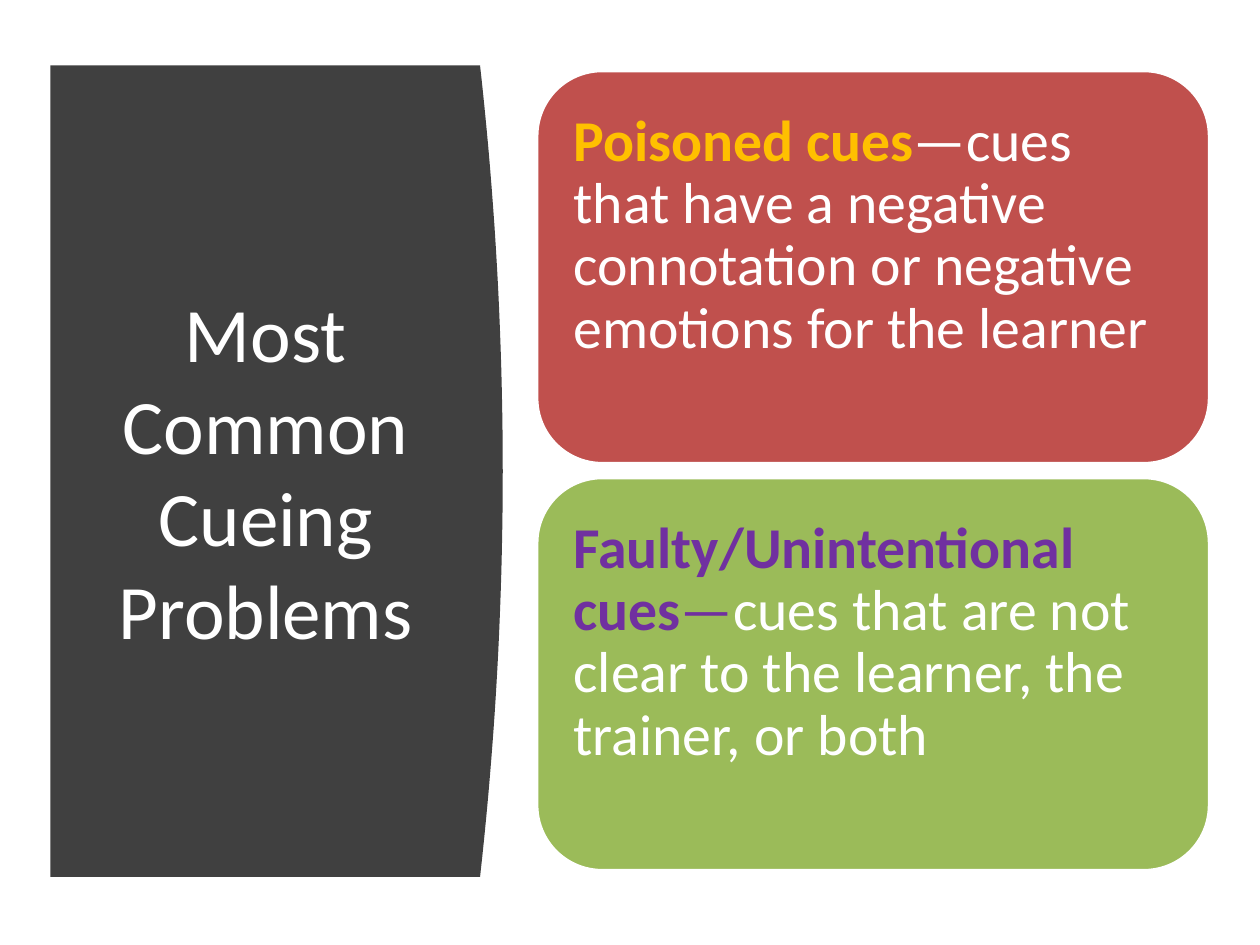
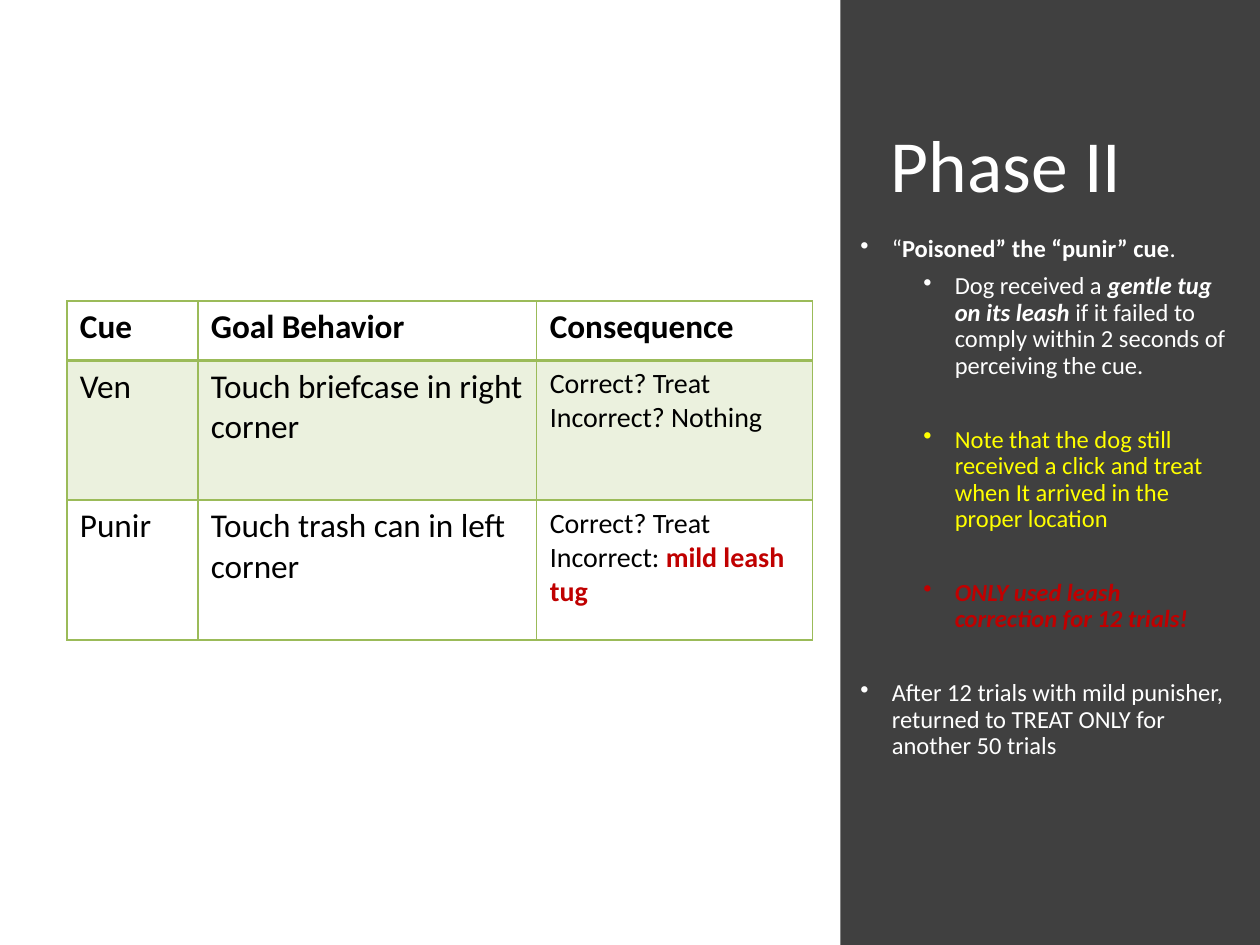
from dataclasses import dataclass

from lxml import etree
from pptx import Presentation
from pptx.dml.color import RGBColor
from pptx.enum.shapes import MSO_SHAPE
from pptx.enum.text import MSO_ANCHOR, PP_ALIGN
from pptx.oxml.ns import qn
from pptx.util import Inches, Pt

ROUND_RECT, RECT = MSO_SHAPE.ROUNDED_RECTANGLE, MSO_SHAPE.RECTANGLE
TOP, MIDDLE, BOTTOM = MSO_ANCHOR.TOP, MSO_ANCHOR.MIDDLE, MSO_ANCHOR.BOTTOM
LEFT, CENTER = PP_ALIGN.LEFT, PP_ALIGN.CENTER

WHITE = RGBColor(0xFF, 0xFF, 0xFF)
BLACK = RGBColor(0, 0, 0)
CHARCOAL = RGBColor(0x40, 0x40, 0x40)
RED = RGBColor(0xC0, 0x50, 0x4D)
GREEN = RGBColor(0x9B, 0xBB, 0x59)
PALE_GREEN = RGBColor(0xEB, 0xF1, 0xDE)
GOLD = RGBColor(0xFF, 0xC0, 0x00)
PURPLE = RGBColor(0x70, 0x30, 0xA0)
YELLOW = RGBColor(0xFF, 0xFF, 0x00)
DEEP_RED = RGBColor(0xC0, 0, 0)
FONT = "Calibri"

# The slide is a grid of 100 columns by 75 rows
SLIDE_W, SLIDE_H = Inches(10), Inches(7.5)
COLUMNS, ROWS = 100, 75


@dataclass(frozen=True)
class Area:
    """A place on the grid, in columns and rows."""
    left: float
    top: float
    width: float
    height: float

    def emu(self) -> tuple[int, int, int, int]:
        return (across(self.left), down(self.top),
                across(self.width), down(self.height))


@dataclass(frozen=True)
class Run:
    text: str
    color: RGBColor
    bold: bool = False
    italic: bool = False


@dataclass(frozen=True)
class Para:
    runs: tuple[Run, ...]
    indent: float = 0  # grid columns; above zero means a bullet
    after: float = 0   # points


@dataclass(frozen=True)
class Card:
    fill: RGBColor
    runs: tuple[Run, ...]


def across(columns: float) -> int:
    return round(SLIDE_W * columns / COLUMNS)


def down(rows: float) -> int:
    return round(SLIDE_H * rows / ROWS)


def write(frame, paras: list[Para], size: float, spacing: float = 1.0,
          align=LEFT) -> None:
    for index, para in enumerate(paras):
        line = frame.paragraphs[0] if index == 0 else frame.add_paragraph()
        line.alignment = align
        line.line_spacing = spacing
        line.space_before, line.space_after = Pt(0), Pt(para.after)
        if para.indent:
            props = line._p.get_or_add_pPr()
            props.set("marL", str(across(para.indent)))
            props.set("indent", str(-across(BULLET_HANG)))
            etree.SubElement(props, qn("a:buChar")).set("char", "•")
        for part in para.runs:
            run = line.add_run()
            run.text = part.text
            run.font.name, run.font.size = FONT, Pt(size)
            run.font.color.rgb = part.color
            run.font.bold, run.font.italic = part.bold, part.italic


def add_text(slide, area: Area, paras: list[Para], size: float, anchor=TOP,
             spacing: float = 1.0, align=LEFT) -> None:
    frame = slide.shapes.add_textbox(*area.emu()).text_frame
    frame.word_wrap = True
    frame.vertical_anchor = anchor
    write(frame, paras, size, spacing, align)


def add_title(slide, area: Area, text: str, size: float, anchor,
              spacing: float = 1.0, align=LEFT) -> None:
    add_text(slide, area, [Para((Run(text, WHITE),))], size, anchor, spacing, align)


def paint(shape, color: RGBColor) -> None:
    shape.shadow.inherit = False
    shape.fill.solid()
    shape.fill.fore_color.rgb = color
    shape.line.fill.background()


# Slide 1: curved title panel and two cards
PANEL = Area(4, 5.2, 35.9, 64.4)
PANEL_BULGE = 1.8
CURVE_STEPS = 40
PANEL_TITLE = Area(7.1, 11.1, 28, 52.4)
FIRST_CARD = Area(42.6, 5.6, 53.4, 31.2)
CARD_PITCH = 32.3
CARD_INSET, CARD_TOP_INSET = 1.4, 1.7
CARDS = [
    Card(RED, (Run("Poisoned cues", GOLD, bold=True),
               Run("—cues that have a negative connotation or negative "
                   "emotions for the learner", WHITE))),
    Card(GREEN, (Run("Faulty/Unintentional cues", PURPLE, bold=True),
                 Run("—", PURPLE),
                 Run("cues that are not clear to the learner, the trainer, "
                     "or both", WHITE))),
]


def add_curved_panel(slide) -> None:
    right = PANEL.left + PANEL.width
    edge = []
    for step in range(CURVE_STEPS + 1):
        share = step / CURVE_STEPS
        bend = PANEL_BULGE * (2 * share - 1) ** 2
        edge.append((across(right - bend), down(PANEL.top + share * PANEL.height)))
    outline = slide.shapes.build_freeform(across(PANEL.left), down(PANEL.top))
    bottom_left = (across(PANEL.left), down(PANEL.top + PANEL.height))
    outline.add_line_segments(edge + [bottom_left], close=True)
    paint(outline.convert_to_shape(), CHARCOAL)


def add_card(slide, card: Card, index: int) -> None:
    area = Area(FIRST_CARD.left, FIRST_CARD.top + index * CARD_PITCH,
                FIRST_CARD.width, FIRST_CARD.height)
    box = slide.shapes.add_shape(ROUND_RECT, *area.emu())
    paint(box, card.fill)
    box.line.color.rgb, box.line.width = WHITE, Pt(2)
    frame = box.text_frame
    frame.word_wrap = True
    frame.vertical_anchor = TOP
    frame.margin_left = frame.margin_right = across(CARD_INSET)
    frame.margin_top, frame.margin_bottom = down(CARD_TOP_INSET), 0
    write(frame, [Para(card.runs)], 33, 0.9)


def build_problems(slide) -> None:
    add_curved_panel(slide)
    add_title(slide, PANEL_TITLE, "Most Common Cueing Problems", 44, MIDDLE,
              align=CENTER)
    for index, card in enumerate(CARDS):
        add_card(slide, card, index)


# Slide 2: cue table and side panel
SIDE_PANEL = Area(66.7, 0, 33.3, 75)
SIDE_TITLE = Area(69.7, 7, 25.6, 10)
SIDE_NOTES = Area(66.7, 18.3, 31.7, 49.4)
BULLET_HANG, MAIN, SUB = 2.5, 3.1, 8.1
GAP, WIDE_GAP = 6, 27
NOTES = [
    Para((Run("“", WHITE), Run("Poisoned” the “punir” cue", WHITE, bold=True),
          Run(".", WHITE)), MAIN, GAP),
    Para((Run("Dog received a ", WHITE),
          Run("gentle tug on its leash ", WHITE, bold=True, italic=True),
          Run("if it failed to comply within 2 seconds of perceiving the cue.",
              WHITE)), SUB, WIDE_GAP),
    Para((Run("Note that the dog still received a click and treat when It "
              "arrived in the proper location", YELLOW),), SUB, WIDE_GAP),
    Para((Run("ONLY used leash correction for 12 trials!", DEEP_RED,
              bold=True, italic=True),), SUB, WIDE_GAP),
    Para((Run("After 12 trials with mild punisher, returned to TREAT ONLY "
              "for another 50 trials", WHITE),), MAIN, GAP),
]

CUE_TABLE = Area(5.3, 23.9, 59.2, 26.9)
CUE_COLUMNS = (10.4, 26.9, 21.9)
CUE_ROWS = (4.7, 11.1, 11.1)
CELL_SIDE, CELL_TOP = 1.05, 0.5
TEXT_SIZE, OUTCOME_SIZE = 19, 16
HEADINGS = ("Cue", "Goal Behavior", "Consequence")
TREAT = Para((Run("Correct? Treat", BLACK),))
TRIALS = [
    ("Ven", "Touch briefcase in right corner",
     [TREAT, Para((Run("Incorrect? Nothing", BLACK),))]),
    ("Punir", "Touch trash can in left corner",
     [TREAT, Para((Run("Incorrect: ", BLACK),
                   Run("mild leash tug", DEEP_RED, bold=True)))]),
]


def set_borders(cell, widths: dict[str, float]) -> None:
    props = cell._tc.get_or_add_tcPr()
    for index, (side, width) in enumerate(widths.items()):
        line = etree.Element(qn(f"a:{side}"), w=str(Pt(width)))
        color = etree.SubElement(etree.SubElement(line, qn("a:solidFill")),
                                 qn("a:srgbClr"))
        color.set("val", str(GREEN))
        props.insert(index, line)


def fill_cell(cell, paras: list[Para], size: float, row: int) -> None:
    cell.margin_left = cell.margin_right = across(CELL_SIDE)
    cell.margin_top = cell.margin_bottom = down(CELL_TOP)
    if row == 1:
        cell.fill.solid()
        cell.fill.fore_color.rgb = PALE_GREEN
    else:
        cell.fill.background()
    set_borders(cell, {"lnL": 1, "lnR": 1, "lnT": 2 if row == 1 else 1,
                       "lnB": 2 if row == 0 else 1})
    write(cell.text_frame, paras, size)


def add_cue_table(slide) -> None:
    table = slide.shapes.add_table(len(CUE_ROWS), len(CUE_COLUMNS),
                                   *CUE_TABLE.emu()).table
    table.first_row = table.horz_banding = False
    for column, width in zip(table.columns, CUE_COLUMNS):
        column.width = across(width)
    for row, height in zip(table.rows, CUE_ROWS):
        row.height = down(height)
    for column, heading in enumerate(HEADINGS):
        fill_cell(table.cell(0, column), [Para((Run(heading, BLACK, bold=True),))],
                  TEXT_SIZE, 0)
    for row, (cue, goal, outcome) in enumerate(TRIALS, start=1):
        for column, text in enumerate((cue, goal)):
            fill_cell(table.cell(row, column), [Para((Run(text, BLACK),))],
                      TEXT_SIZE, row)
        fill_cell(table.cell(row, 2), outcome, OUTCOME_SIZE, row)


def build_phase_two(slide) -> None:
    paint(slide.shapes.add_shape(RECT, *SIDE_PANEL.emu()), CHARCOAL)
    add_title(slide, SIDE_TITLE, "Phase II", 42, BOTTOM, 0.9)
    add_text(slide, SIDE_NOTES, NOTES, 14, spacing=0.9)
    add_cue_table(slide)


def main() -> None:
    deck = Presentation()
    deck.slide_width, deck.slide_height = SLIDE_W, SLIDE_H
    blank = deck.slide_layouts[6]
    for build in (build_problems, build_phase_two):
        build(deck.slides.add_slide(blank))
    deck.save("out.pptx")


if __name__ == "__main__":
    main()
